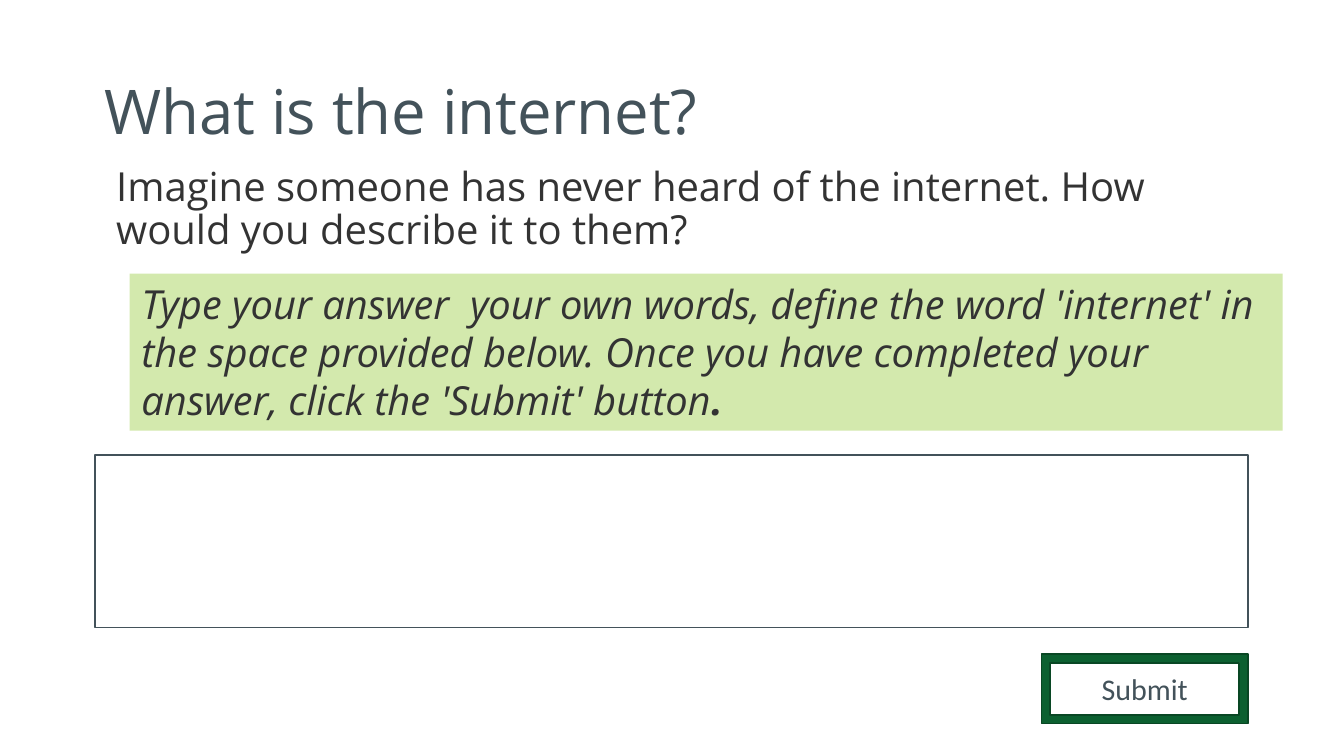
from pptx import Presentation
from pptx.util import Inches, Pt
from pptx.dml.color import RGBColor
from pptx.enum.shapes import MSO_SHAPE as Shape
from pptx.enum.text import MSO_ANCHOR as Anchor, MSO_AUTO_SIZE as Fit, PP_ALIGN as Align

WIDE, HIGH = 11.2, 6.3
SLATE, INK = "43525A", "333333"
LIME, GREEN, DARK = "D3E9AD", "0C6030", "094724"
SANS = "Open Sans"

TITLE = "What is the internet?"
PROMPT = "Imagine someone has never heard of the internet. How would you describe it to them?"
TASK = [
    ("Type your answer  your own words, define the word 'internet' in the space provided below. "
     "Once you have completed your answer, click the 'Submit' button", False),
    (".", True),
]
BUTTON = "Submit"

LEFT, SPAN = 0.79, 9.61
RIGHT = LEFT + SPAN
PUSH = 1.72
SPOTS = {
    "title": (0.77, 0.34, 9.66, 1.22),
    "prompt": (0.87, 1.34, 9.66, 4),
    "task": (1.08, 2.28, SPAN, 1.31),
    "answer": (LEFT, 3.79, SPAN, 1.44),
    "button": (RIGHT - PUSH, 5.45, PUSH, 0.58),
}


def hue(code):
    return RGBColor.from_string(code)


def spot(name):
    return [Inches(n) for n in SPOTS[name]]


def block(name, kind, fill=None, line=None):
    shape = slide.shapes.add_shape(kind, *spot(name))
    shape.shadow.inherit = False
    if fill:
        shape.fill.solid()
        shape.fill.fore_color.rgb = hue(fill)
    else:
        shape.fill.background()
    if line:
        shape.line.color.rgb = hue(line)
        shape.line.width = Pt(1)
    else:
        shape.line.fill.background()
    return shape


def write(shape, runs, size, color, face=SANS, align=Align.LEFT, anchor=Anchor.TOP):
    frame = shape.text_frame
    frame.word_wrap = True
    frame.auto_size = Fit.NONE
    frame.vertical_anchor = anchor
    para = frame.paragraphs[0]
    para.alignment = align
    para.font.size = Pt(size)
    para.font.name = face
    para.font.color.rgb = hue(color)
    for text, bold in runs:
        run = para.add_run()
        run.text = text
        if bold:
            run.font.bold = True
    return para


deck = Presentation()
deck.slide_width, deck.slide_height = Inches(WIDE), Inches(HIGH)
slide = deck.slides.add_slide(deck.slide_layouts[5])

block("answer", Shape.RECTANGLE, line=SLATE)
button = block("button", Shape.FRAME, GREEN, DARK)
write(button, [(BUTTON, False)], 18, SLATE, "Calibri", Align.CENTER, Anchor.MIDDLE)

title = slide.shapes.title
title.left, title.top, title.width, title.height = spot("title")
write(title, [(TITLE, False)], 37, SLATE, anchor=Anchor.MIDDLE).line_spacing = 0.9

prompt = slide.shapes.add_textbox(*spot("prompt"))
para = write(prompt, [(PROMPT, False)], 24, INK)
para.line_spacing = 0.9
para.space_before = Pt(8.4)

task = block("task", Shape.RECTANGLE, LIME)
write(task, TASK, 24, INK).font.italic = True

deck.save("out.pptx")
